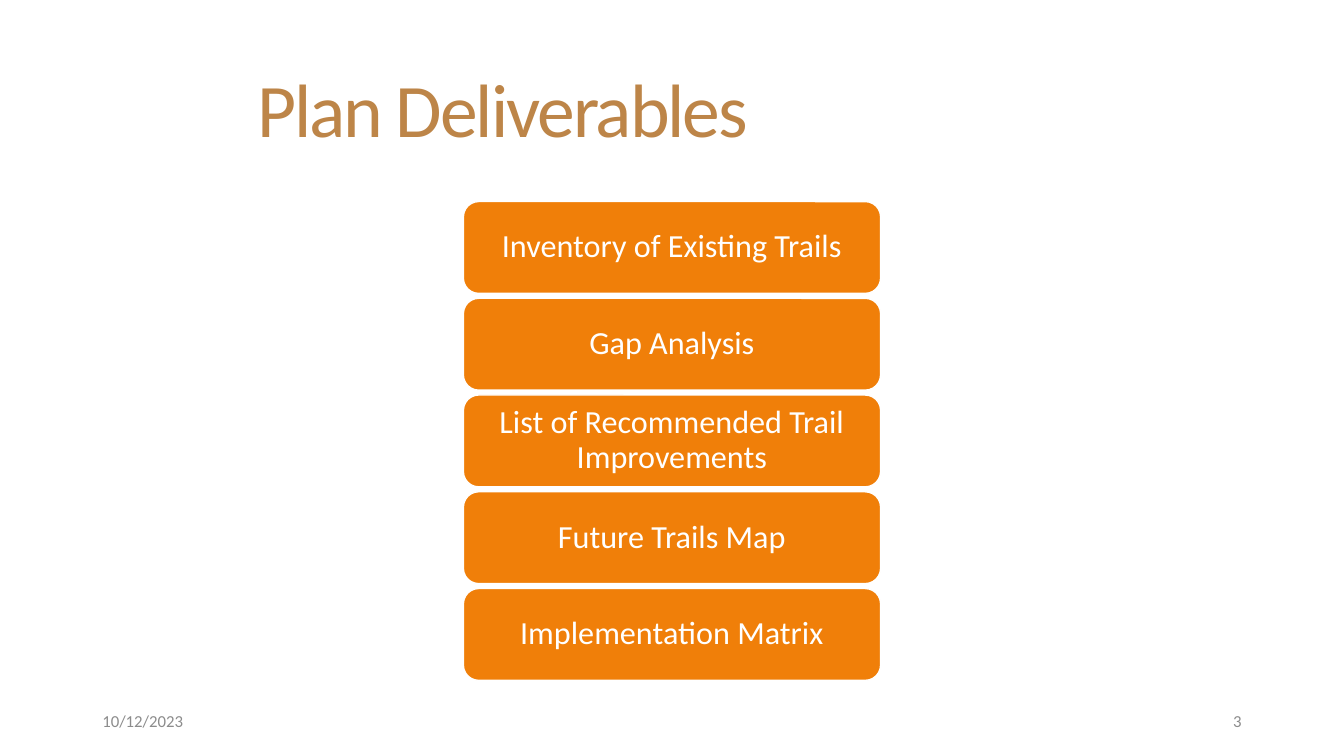
from dataclasses import dataclass

from pptx import Presentation
from pptx.dml.color import RGBColor
from pptx.enum import shapes, text
from pptx.util import Pt


@dataclass(frozen=True)
class Theme:
    font: str = "Calibri"
    brown: str = "BD8548"
    orange: str = "F07F09"
    white: str = "FFFFFF"
    gray: str = "8C8C8C"
    head: float = 54
    item: float = 23
    foot: float = 12


def write(frame, words, size, color, font, align=text.PP_ALIGN.LEFT,
          lead=1.0, track=None, inset=(7.2, 3.6)):
    """Fill a text frame with one paragraph, centred vertically."""
    frame.word_wrap = True
    frame.auto_size = text.MSO_AUTO_SIZE.NONE
    frame.vertical_anchor = text.MSO_ANCHOR.MIDDLE
    frame.margin_left = frame.margin_right = Pt(inset[0])
    frame.margin_top = frame.margin_bottom = Pt(inset[1])
    para = frame.paragraphs[0]
    para.alignment = align
    para.line_spacing = lead
    run = para.add_run()
    run.text = words
    run.font.name = font
    run.font.size = Pt(size)
    run.font.color.rgb = RGBColor.from_string(color)
    if track is not None:
        run.font._element.set("spc", str(round(track * 100)))


class Board:
    def __init__(self, slide, theme):
        self.slide = slide
        self.theme = theme

    def title(self, words, left, top, width, height):
        box = self.slide.shapes.title
        box.left, box.top = Pt(left), Pt(top)
        box.width, box.height = Pt(width), Pt(height)
        write(box.text_frame, words, self.theme.head, self.theme.brown,
              self.theme.font, lead=0.9, track=-1.5)

    def card(self, words, left, top, width, height):
        box = self.slide.shapes.add_shape(
            shapes.MSO_SHAPE.ROUNDED_RECTANGLE,
            Pt(left), Pt(top), Pt(width), Pt(height))
        box.shadow.inherit = False
        box.fill.solid()
        box.fill.fore_color.rgb = RGBColor.from_string(self.theme.orange)
        box.line.color.rgb = RGBColor.from_string(self.theme.white)
        box.line.width = Pt(1)
        write(box.text_frame, words, self.theme.item, self.theme.white,
              self.theme.font, text.PP_ALIGN.CENTER, lead=0.9,
              inset=(10.3, 6.5))

    def stack(self, items, left, top, width, height, step):
        """Place cards in a column at an equal step."""
        for row, words in enumerate(items):
            self.card(words, left, top + row * step, width, height)

    def foot(self, words, left, align):
        box = self.slide.shapes.add_textbox(
            Pt(left), Pt(500.5), Pt(216), Pt(28.8))
        write(box.text_frame, words, self.theme.foot, self.theme.gray,
              self.theme.font, align)


def main():
    deck = Presentation()
    deck.slide_width, deck.slide_height = Pt(960), Pt(540)
    board = Board(deck.slides.add_slide(deck.slide_layouts[5]), Theme())
    board.title("Plan Deliverables", 176.4, 28.8, 717.8, 104.4)
    items = [
        "Inventory of Existing Trails",
        "Gap Analysis",
        "List of Recommended Trail Improvements",
        "Future Trails Map",
        "Implementation Matrix",
    ]
    board.stack(items, left=331, top=144, width=298, height=65.6, step=69.1)
    board.foot("10/12/2023", 66, text.PP_ALIGN.LEFT)
    board.foot("3", 678, text.PP_ALIGN.RIGHT)
    deck.save("out.pptx")


if __name__ == "__main__":
    main()
